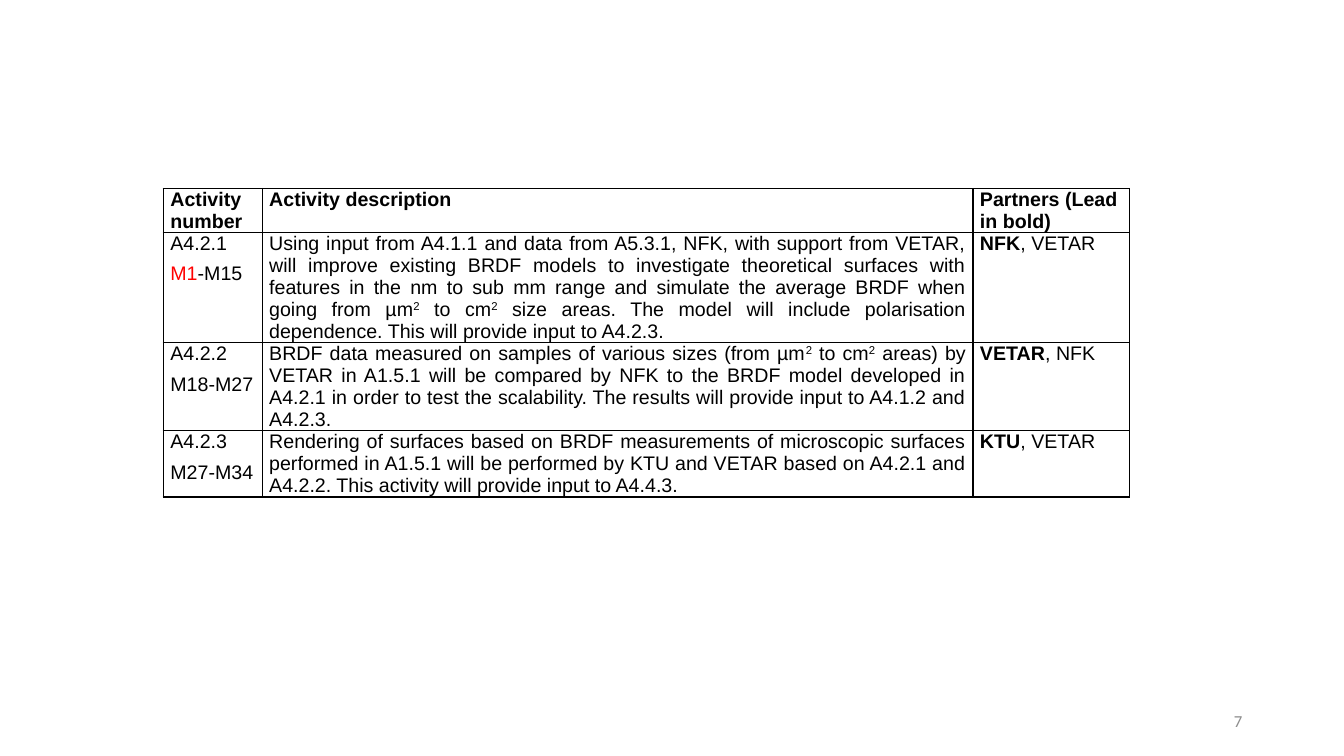
from lxml.etree import SubElement
from pptx import Presentation
from pptx.dml.color import RGBColor
from pptx.enum.text import MSO_ANCHOR, PP_ALIGN
from pptx.oxml.ns import qn
from pptx.util import Inches, Pt

COLORS = {"text": "000000", "border": "000000", "changed": "FF0000", "number": "8C8C8C"}

HEADINGS = ["Activity number", "Activity description", "Partners (Lead in bold)"]
ACTIVITIES = [
    ("A4.2.1", "M1", "-M15",
     "Using input from A4.1.1 and data from A5.3.1, NFK, with support from VETAR, will improve "
     "existing BRDF models to investigate theoretical surfaces with features in the nm to sub mm "
     "range and simulate the average BRDF when going from µm^2 to cm^2 size areas. The model will "
     "include polarisation dependence. This will provide input to A4.2.3.",
     "NFK", ", VETAR"),
    ("A4.2.2", "", "M18-M27",
     "BRDF data measured on samples of various sizes (from µm^2 to cm^2 areas) by VETAR in A1.5.1 "
     "will be compared by NFK to the BRDF model developed in A4.2.1 in order to test the "
     "scalability. The results will provide input to A4.1.2 and A4.2.3.",
     "VETAR", ", NFK"),
    ("A4.2.3", "", "M27-M34",
     "Rendering of surfaces based on BRDF measurements of microscopic surfaces performed in A1.5.1 "
     "will be performed by KTU and VETAR based on A4.2.1 and A4.2.2. This activity will provide "
     "input to A4.4.3.",
     "KTU", ", VETAR"),
]
COLUMN_WIDTHS = [0.98, 7.05, 1.55]
ROW_HEIGHTS = [0.43, 1.09, 0.87, 0.65]


def format_cell(cell):
    cell.fill.background()
    cell.margin_left = cell.margin_right = Inches(0.07)
    cell.margin_top = cell.margin_bottom = 0
    properties = cell._tc.get_or_add_tcPr()
    for position, side in enumerate(("a:lnL", "a:lnR", "a:lnT", "a:lnB")):
        border = properties.makeelement(qn(side), {"w": str(Pt(1))})
        border_fill = SubElement(border, qn("a:solidFill"))
        SubElement(border_fill, qn("a:srgbClr"), val=COLORS["border"])
        properties.insert(position, border)


def format_paragraph(paragraph, bold=None):
    paragraph.space_before = paragraph.space_after = Pt(3)
    paragraph.font.name = "Arial"
    paragraph.font.size = Pt(14)
    paragraph.font.bold = bold
    paragraph.font.color.rgb = RGBColor.from_string(COLORS["text"])
    return paragraph


prs = Presentation()
prs.slide_width, prs.slide_height = Inches(13.33), Inches(7.5)
slide = prs.slides.add_slide(prs.slide_layouts[6])

plan = slide.shapes.add_table(
    len(ROW_HEIGHTS), len(COLUMN_WIDTHS), Inches(1.62), Inches(1.87),
    Inches(sum(COLUMN_WIDTHS)), Inches(sum(ROW_HEIGHTS))).table
plan.first_row = plan.horz_banding = False
for column, width in zip(plan.columns, COLUMN_WIDTHS):
    column.width = Inches(width)
for row, height in zip(plan.rows, ROW_HEIGHTS):
    row.height = Inches(height)
for cell in plan.iter_cells():
    format_cell(cell)

for column, heading in enumerate(HEADINGS):
    title = format_paragraph(plan.cell(0, column).text_frame.paragraphs[0], bold=True)
    title.add_run().text = heading

for row, (activity, changed, months, description, lead, others) in enumerate(ACTIVITIES, 1):
    number_frame = plan.cell(row, 0).text_frame
    format_paragraph(number_frame.paragraphs[0]).add_run().text = activity
    period = format_paragraph(number_frame.add_paragraph())
    if changed:
        changed_month = period.add_run()
        changed_month.text = changed
        changed_month.font.color.rgb = RGBColor.from_string(COLORS["changed"])
    period.add_run().text = months

    details = format_paragraph(plan.cell(row, 1).text_frame.paragraphs[0])
    details.alignment = PP_ALIGN.JUSTIFY
    for index, part in enumerate(description.split("^")):
        if index:
            exponent = details.add_run()
            exponent.text = part[0]
            exponent._r.get_or_add_rPr().set("baseline", "30000")
            part = part[1:]
        details.add_run().text = part

    partners = format_paragraph(plan.cell(row, 2).text_frame.paragraphs[0])
    lead_partner = partners.add_run()
    lead_partner.text = lead
    lead_partner.font.bold = True
    partners.add_run().text = others

page_frame = slide.shapes.add_textbox(
    Inches(9.42), Inches(6.95), Inches(3), Inches(0.4)).text_frame
page_frame.word_wrap = True
page_frame.vertical_anchor = MSO_ANCHOR.MIDDLE
page_number = page_frame.paragraphs[0]
page_number.text = "7"
page_number.alignment = PP_ALIGN.RIGHT
page_number.font.name = "Calibri"
page_number.font.size = Pt(12)
page_number.font.color.rgb = RGBColor.from_string(COLORS["number"])

prs.save("out.pptx")
